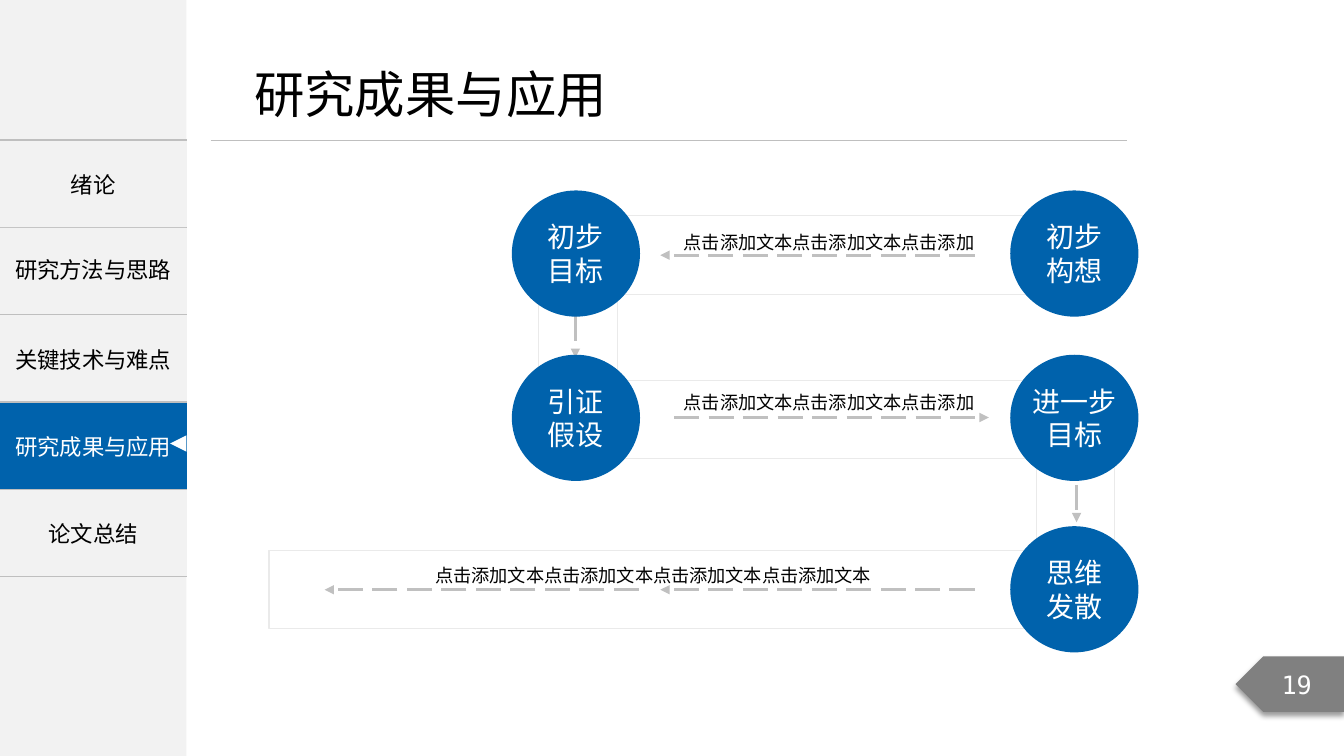
from dataclasses import dataclass

import pptx
import pptx.dml.color
import pptx.enum.dml
import pptx.enum.shapes
import pptx.enum.text
import pptx.oxml
import pptx.oxml.ns
import pptx.util
from pptx.util import Cm

SHAPE = pptx.enum.shapes.MSO_SHAPE
ALIGN = pptx.enum.text.PP_ALIGN
MIDDLE = pptx.enum.text.MSO_ANCHOR.MIDDLE
NS = pptx.oxml.ns.nsdecls("a")
qn = pptx.oxml.ns.qn

CJK, LATIN, MONO = "Noto Sans CJK SC", "Calibri", "DejaVu Sans Mono"
BLUE, PALE, WHITE, BLACK = "0062AC", "F2F2F2", "FFFFFF", "000000"
RULE, FRAME, ARROW, TAG = "BFBFBF", "EAEAEA", "C0C0C0", "808080"

SIDEBAR_WIDTH, MENU_TOP, ROW_HEIGHT = 4.7, 3.53, 2.2
CIRCLE_WIDTH, CIRCLE_HEIGHT = 3.23, 3.18
BAND_HEIGHT, NOTE_HEIGHT = 1.98, 1.07
LEFT_COLUMN, RIGHT_COLUMN = 12.9, 25.46
CIRCLE_ROWS = (4.8, 8.94, 13.26)
NOTE = "点击添加文本点击添加文本点击添加"


@dataclass
class Band:
    left: float
    top: float
    width: float
    rotation: float = 0


@dataclass
class Line:
    x1: float
    y1: float
    x2: float
    y2: float


@dataclass
class Step:
    left: float
    top: float
    text: str


@dataclass
class Note:
    left: float
    top: float
    width: float
    text: str


MENU = ("绪论", "", "关键技术与难点", "研究成果与应用", "论文总结")
CURRENT = "研究成果与应用"
BANDS = (
    Band(6.78, 13.87, 21.29),
    Band(14.33, 9.58, 13.77),
    Band(24.38, 12.24, 5.44, 90),
    Band(15.44, 5.44, 12.62),
    Band(11.51, 7.52, 6.1, 90),
)
ARROWS = (
    Line(24.56, 14.86, 16.64, 14.86),
    Line(16.99, 10.52, 24.92, 10.52),
    Line(27.13, 12.22, 27.13, 13.16),
    Line(24.56, 6.43, 16.64, 6.43),
    Line(14.5, 7.95, 14.5, 9.02),
    Line(16.1, 14.86, 8.18, 14.86),
)
STEPS = (
    Step(RIGHT_COLUMN, CIRCLE_ROWS[0], "初步\n构想"),
    Step(LEFT_COLUMN, CIRCLE_ROWS[0], "初步\n目标"),
    Step(LEFT_COLUMN, CIRCLE_ROWS[1], "引证\n假设"),
    Step(RIGHT_COLUMN, CIRCLE_ROWS[1], "进一步\n目标"),
    Step(RIGHT_COLUMN, CIRCLE_ROWS[2], "思维\n发散"),
)
NOTES = (
    Note(16.71, 5.44, 8.36, NOTE),
    Note(16.71, 9.47, 8.36, NOTE),
    Note(8.36, 13.82, 16.2, NOTE + "文本点击添加文本"),
)


def color(value: str) -> pptx.dml.color.RGBColor:
    return pptx.dml.color.RGBColor.from_string(value)


def write(frame, text: str, size: float, font: str, ink: str, align=ALIGN.CENTER) -> None:
    frame.text = text
    for para in frame.paragraphs:
        para.alignment = align
        for span in para.runs:
            span.font.size = pptx.util.Pt(size)
            span.font.name = font
            span.font.bold = False
            span.font.color.rgb = color(ink)
            span.font._element.append(pptx.oxml.parse_xml(f'<a:ea {NS} typeface="{font}"/>'))


def set_margins(frame) -> None:
    frame.margin_left = frame.margin_right = Cm(0.2)
    frame.margin_top = frame.margin_bottom = Cm(0.1)


def add_box(page, kind, left: float, top: float, width: float, height: float,
            fill: str, line: str | None = None, rotation: float = 0):
    box = page.shapes.add_shape(kind, Cm(left), Cm(top), Cm(width), Cm(height))
    box.shadow.inherit = False
    box.rotation = rotation
    box.fill.solid()
    box.fill.fore_color.rgb = color(fill)
    if line:
        box.line.color.rgb = color(line)
        box.line.width = pptx.util.Pt(0.75)
    else:
        box.line.fill.background()
    box.text_frame.vertical_anchor = MIDDLE
    return box


def add_line(page, line: Line, ink: str, width: float):
    connector = page.shapes.add_connector(
        pptx.enum.shapes.MSO_CONNECTOR.STRAIGHT,
        Cm(line.x1), Cm(line.y1), Cm(line.x2), Cm(line.y2))
    connector.line.color.rgb = color(ink)
    connector.line.width = pptx.util.Pt(width)
    connector._element.spPr.append(pptx.oxml.parse_xml(f"<a:effectLst {NS}/>"))
    return connector


def add_arrow(page, line: Line) -> None:
    connector = add_line(page, line, ARROW, 2.25)
    connector.line.dash_style = pptx.enum.dml.MSO_LINE.LONG_DASH
    connector._element.spPr.find(qn("a:ln")).append(
        pptx.oxml.parse_xml(f'<a:tailEnd {NS} type="triangle"/>'))


def set_borders(cell) -> None:
    """Rule the cell above and below, and leave its sides open."""
    ruled = f'<a:solidFill><a:srgbClr val="{RULE}"/></a:solidFill>'
    sides = {"lnL": "<a:noFill/>", "lnR": "<a:noFill/>", "lnT": ruled, "lnB": ruled}
    properties = cell._tc.get_or_add_tcPr()
    for index, (side, paint) in enumerate(sides.items()):
        properties.insert(index, pptx.oxml.parse_xml(
            f'<a:{side} {NS} w="12700">{paint}</a:{side}>'))


def add_sidebar(page) -> None:
    add_box(page, SHAPE.RECTANGLE, 0, 0, SIDEBAR_WIDTH, 19.05, PALE)
    table = page.shapes.add_table(
        len(MENU), 1, Cm(0), Cm(MENU_TOP), Cm(SIDEBAR_WIDTH), Cm(ROW_HEIGHT * len(MENU))).table
    table.first_row = table.horz_banding = False
    for row, label in enumerate(MENU):
        cell = table.cell(row, 0)
        current = label == CURRENT
        cell.fill.solid()
        cell.fill.fore_color.rgb = color(BLUE if current else PALE)
        cell.vertical_anchor = MIDDLE
        write(cell.text_frame, label, 16, CJK, WHITE if current else BLACK)
        set_borders(cell)
    methods = add_box(page, SHAPE.RECTANGLE, 0, 5.74, SIDEBAR_WIDTH, 2.13, PALE)
    write(methods.text_frame, "研究方法与思路", 16, CJK, BLACK)
    add_box(page, SHAPE.ISOSCELES_TRIANGLE, 4.29, 10.97, 0.41, 0.41, WHITE, rotation=270)


def add_title(page) -> None:
    title = page.shapes.title
    title.left, title.top, title.width, title.height = Cm(6.15), Cm(1.45), Cm(9.5), Cm(1.8)
    frame = title.text_frame
    write(frame, CURRENT, 36, CJK, BLACK, ALIGN.LEFT)
    frame.word_wrap = False
    frame.auto_size = pptx.enum.text.MSO_AUTO_SIZE.NONE
    frame.vertical_anchor = MIDDLE
    add_line(page, Line(5.31, 3.53, 28.4, 3.53), RULE, 0.5)


def add_page_tag(page) -> None:
    tag = add_box(page, SHAPE.PENTAGON, 31.14, 16.54, 2.73, 1.4, TAG)
    write(tag.text_frame, "19", 18, MONO, WHITE)
    properties = tag._element.spPr
    properties.find(qn("a:xfrm")).set("flipH", "1")
    properties.find(qn("a:effectLst")).append(pptx.oxml.parse_xml(
        f'<a:outerShdw {NS} blurRad="50800" dist="38100" dir="5400000" rotWithShape="0">'
        f'<a:srgbClr val="{BLACK}"><a:alpha val="40000"/></a:srgbClr></a:outerShdw>'))


def add_step(page, step: Step) -> None:
    circle = add_box(page, SHAPE.OVAL, step.left, step.top, CIRCLE_WIDTH, CIRCLE_HEIGHT, BLUE)
    write(circle.text_frame, step.text, 20, LATIN, WHITE)
    circle.text_frame.word_wrap = False
    set_margins(circle.text_frame)


def add_note(page, note: Note) -> None:
    frame = page.shapes.add_textbox(
        Cm(note.left), Cm(note.top), Cm(note.width), Cm(NOTE_HEIGHT)).text_frame
    write(frame, note.text, 13, CJK, BLACK)
    frame.paragraphs[0].line_spacing = 1.5
    frame.word_wrap = True
    frame.auto_size = pptx.enum.text.MSO_AUTO_SIZE.SHAPE_TO_FIT_TEXT
    frame.vertical_anchor = MIDDLE
    set_margins(frame)


def main() -> None:
    deck = pptx.Presentation()
    deck.slide_width, deck.slide_height = Cm(33.87), Cm(19.05)
    page = deck.slides.add_slide(deck.slide_layouts[5])
    add_sidebar(page)
    add_title(page)
    add_page_tag(page)
    for band in BANDS:
        add_box(page, SHAPE.RECTANGLE, band.left, band.top, band.width, BAND_HEIGHT,
                WHITE, FRAME, band.rotation)
    for arrow in ARROWS:
        add_arrow(page, arrow)
    for step in STEPS:
        add_step(page, step)
    for note in NOTES:
        add_note(page, note)
    deck.save("out.pptx")


if __name__ == "__main__":
    main()
